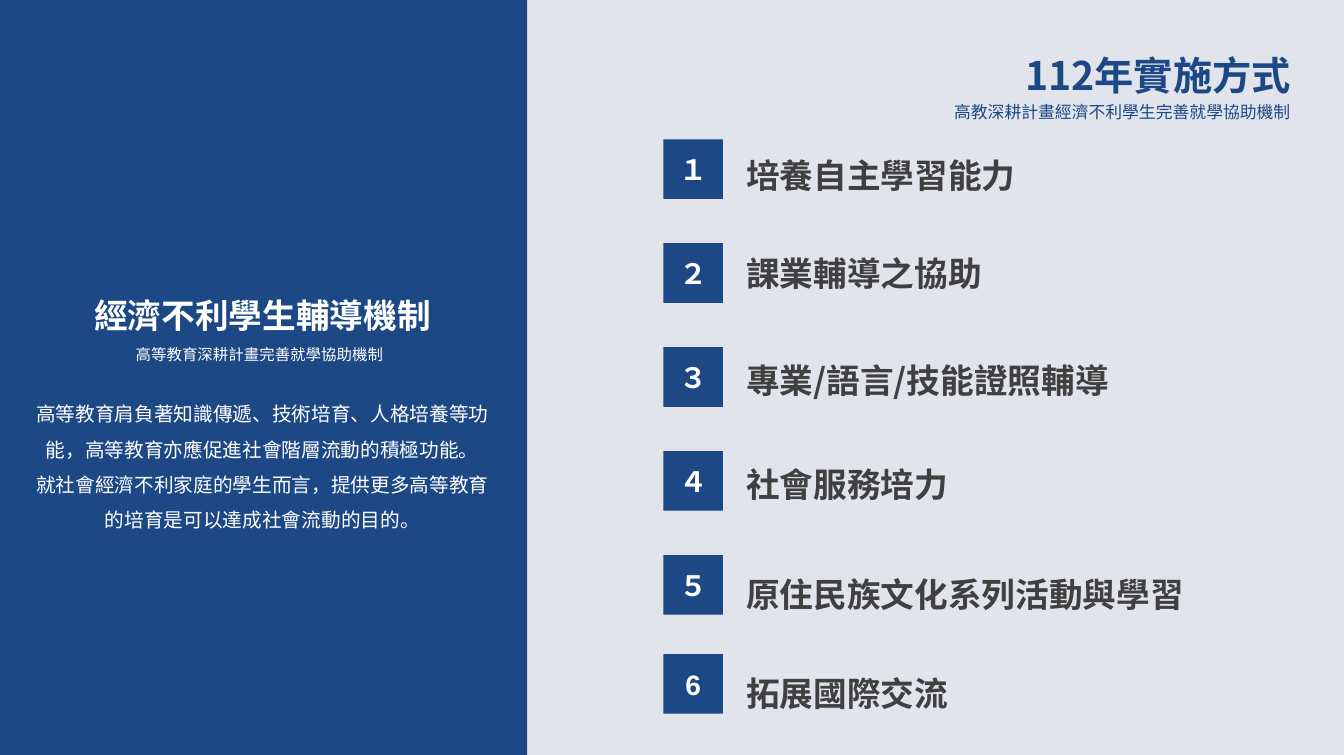
from lxml import etree
from pptx import Presentation
from pptx.dml.color import RGBColor
from pptx.enum.shapes import MSO_SHAPE
from pptx.enum.text import MSO_ANCHOR, PP_ALIGN
from pptx.oxml.ns import qn
from pptx.util import Inches, Pt

RECT = MSO_SHAPE.RECTANGLE
MIDDLE = MSO_ANCHOR.MIDDLE
LEFT, CENTER, RIGHT = PP_ALIGN.LEFT, PP_ALIGN.CENTER, PP_ALIGN.RIGHT

NAVY = RGBColor(0x1C, 0x48, 0x85)
PALE = RGBColor(0xE2, 0xE4, 0xEC)
GRAY = RGBColor(0x40, 0x40, 0x40)
WHITE = RGBColor(0xFF, 0xFF, 0xFF)

CJK_FONT = "Noto Sans CJK SC"
NUMBER_FONT = "Arial"

BADGE_LEFT, BADGE_SIZE = 6.57, 0.59
ITEM_LEFT = 7.29

# number, badge top, wording, text top, width, height, line spacing
ITEMS = [
    ("１", 1.38, "培養自主學習能力", 1.28, 4.24, 0.71, 1.5),
    ("２", 2.41, "課業輔導之協助", 2.46, 3.38, 0.5, 1.0),
    ("３", 3.44, "專業/語言/技能證照輔導", 3.32, 4.95, 0.64, 1.5),
    ("４", 4.47, "社會服務培力", 4.35, 4.32, 0.64, 1.5),
    ("５", 5.5, "原住民族文化系列活動與學習", 5.44, 5.42, 0.71, 1.5),
    ("6", 6.48, "拓展國際交流", 6.42, 5.42, 0.71, 1.5),
]

INTRO = [
    "高等教育肩負著知識傳遞、技術培育、人格培養等功能，高等教育亦應促進社會階層流動的積極功能。",
    "就社會經濟不利家庭的學生而言，提供更多高等教育的培育是可以達成社會流動的目的。",
]


def style_paragraph(p, font, size, color, bold, align, spacing=1.0):
    p.alignment = align
    p.line_spacing = spacing
    p.font.name = font
    p.font.size = Pt(size)
    p.font.bold = bold
    p.font.color.rgb = color
    latin = p._p.pPr.find(qn("a:defRPr")).find(qn("a:latin"))
    east_asian = etree.Element(qn("a:ea"), typeface=font)
    latin.addnext(east_asian)


def add_text(slide, box, lines, size, color, bold=False, align=LEFT, spacing=1.0):
    tf = slide.shapes.add_textbox(*map(Inches, box)).text_frame
    tf.word_wrap = True
    tf.text = "\n".join(lines)
    for p in tf.paragraphs:
        style_paragraph(p, CJK_FONT, size, color, bold, align, spacing)


def add_block(slide, box):
    sp = slide.shapes.add_shape(RECT, *map(Inches, box))
    sp.shadow.inherit = False
    sp.fill.solid()
    sp.fill.fore_color.rgb = NAVY
    sp.line.fill.background()
    return sp


def add_badge(slide, top, number):
    sp = add_block(slide, (BADGE_LEFT, top, BADGE_SIZE, BADGE_SIZE))
    tf = sp.text_frame
    tf.vertical_anchor = MIDDLE
    tf.text = number
    style_paragraph(tf.paragraphs[0], NUMBER_FONT, 20, WHITE, True, CENTER)


def main():
    prs = Presentation()
    prs.slide_width, prs.slide_height = Inches(13.31), Inches(7.48)
    s = prs.slides.add_slide(prs.slide_layouts[6])
    s.background.fill.solid()
    s.background.fill.fore_color.rgb = PALE

    add_text(s, (9.23, 0.46, 3.65, 0.57), ["112年實施方式"], 28, NAVY, True, RIGHT)
    add_text(s, (7.1, 0.86, 5.78, 0.4), ["高教深耕計畫經濟不利學生完善就學協助機制"],
             12, NAVY, align=RIGHT, spacing=1.5)

    add_block(s, (0, 0, 5.22, 7.48))
    add_text(s, (0.38, 2.87, 4.44, 0.5), ["經濟不利學生輔導機制"], 24, WHITE, True, CENTER)
    add_text(s, (0.77, 3.28, 3.6, 0.38), ["高等教育深耕計畫完善就學協助機制"],
             11, WHITE, align=CENTER, spacing=1.5)
    add_text(s, (0.2, 3.82, 4.8, 1.51), INTRO, 14, WHITE, align=CENTER, spacing=1.5)

    for number, badge_top, wording, top, width, height, spacing in ITEMS:
        add_badge(s, badge_top, number)
        add_text(s, (ITEM_LEFT, top, width, height), [wording], 24, GRAY, True,
                 spacing=spacing)

    prs.save("out.pptx")


if __name__ == "__main__":
    main()
